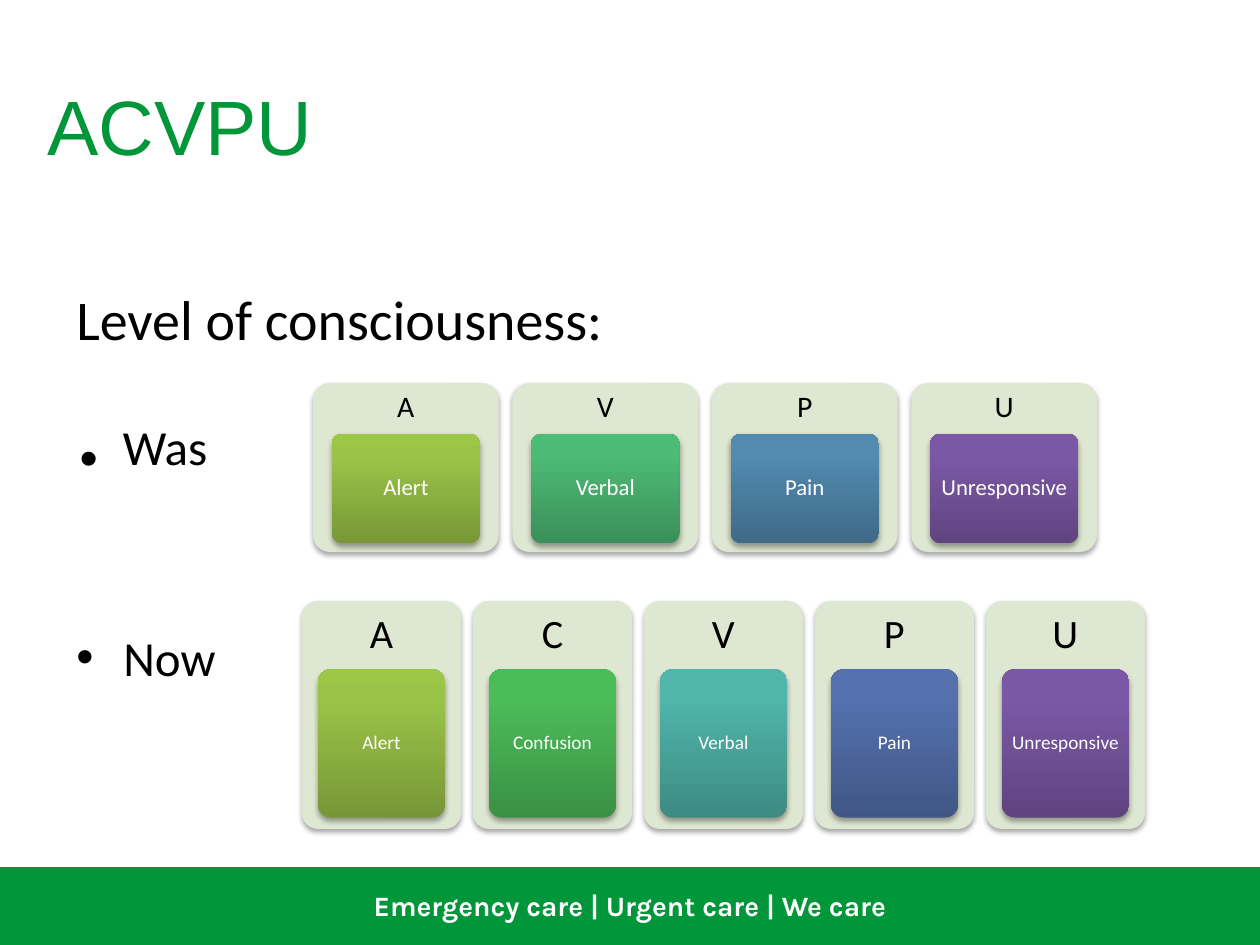
from copy import deepcopy

from lxml.etree import SubElement
from pptx import Presentation
from pptx.dml.color import RGBColor
from pptx.enum.shapes import MSO_SHAPE
from pptx.enum.text import MSO_ANCHOR, PP_ALIGN
from pptx.oxml.ns import qn
from pptx.util import Pt

PX = 914400 // 126
WIDTH, HEIGHT = 1260, 945

GREEN = RGBColor(0x00, 0x96, 0x39)
WHITE = RGBColor(0xFF, 0xFF, 0xFF)
BLACK = RGBColor(0x00, 0x00, 0x00)
PANEL = RGBColor(0xDE, 0xE7, 0xD1)
# Tile gradients, bottom to top
LIME = ("779737", "9BC348", "9DC746")
MINT = ("3B8F5A", "4DBA75", "4BBD75")
LEAF = ("3A9144", "4CBC58", "4ABF57")
TEAL = ("3D8B83", "50B5AA", "4EB8AC")
STEEL = ("3F6A88", "528AB0", "518BB3")
INDIGO = ("405786", "5471AE", "5271B0")
PURPLE = ("5F4480", "7B58A6", "7C57A8")
GRADIENT_POSITIONS = (0, 0.8, 1)

TITLE = "ACVPU"
FOOTER = "Emergency care | Urgent care | We care"
# Runs of (text, size, bold), space before, bulleted
BODY = [
    ([("Level of consciousness:", 32, False)], 0, False),
    ([(". ", 54, True), ("Was", 28, False)], 11, False),
    ([("Now", 28, False)], 82, True),
]
SCALES = [
    dict(box=(313, 383, 784, 169), letter_size=17, word_size=13, levels=[
        ("A", "Alert", LIME), ("V", "Verbal", MINT),
        ("P", "Pain", STEEL), ("U", "Unresponsive", PURPLE)]),
    dict(box=(302, 601, 843, 228), letter_size=23, word_size=11, levels=[
        ("A", "Alert", LIME), ("C", "Confusion", LEAF), ("V", "Verbal", TEAL),
        ("P", "Pain", INDIGO), ("U", "Unresponsive", PURPLE)]),
]
GAP_RATIO = 0.075  # gap between panels, as a share of panel width


def emu(*lengths):
    return [round(length * PX) for length in lengths]


def style(paragraph, size, color, font="Calibri", bold=False, align=None):
    paragraph.font.name = font
    paragraph.font.size = Pt(size)
    paragraph.font.color.rgb = color
    paragraph.font.bold = bold
    paragraph.alignment = align


def set_margins(frame, horizontal, vertical):
    frame.margin_left = frame.margin_right = horizontal * PX
    frame.margin_top = frame.margin_bottom = vertical * PX


def add_text_box(shapes, box):
    frame = shapes.add_textbox(*emu(*box)).text_frame
    frame.word_wrap = True
    return frame


def centre_label(frame, text, size, color):
    frame.word_wrap = True
    frame.vertical_anchor = MSO_ANCHOR.MIDDLE
    label = frame.paragraphs[0]
    label.text = text
    label.line_spacing = 0.9
    style(label, size, color, align=PP_ALIGN.CENTER)


def add_card(shapes, box):
    """Add a rounded, borderless rectangle with a soft shadow below it."""
    card = shapes.add_shape(MSO_SHAPE.ROUNDED_RECTANGLE, *emu(*box))
    card.adjustments[0] = 0.1
    card.line.fill.background()
    card.shadow.inherit = False
    effects = card._element.spPr.find(qn("a:effectLst"))
    shadow = SubElement(effects, qn("a:outerShdw"), blurRad="40000",
                        dist="23000", dir="5400000", rotWithShape="0")
    black = SubElement(shadow, qn("a:srgbClr"), val="000000")
    SubElement(black, qn("a:alpha"), val="35000")
    return card


def fill_gradient(shape, colors):
    shape.fill.gradient()
    shape.fill.gradient_angle = 90
    stop_list = shape._element.spPr.find(".//" + qn("a:gsLst"))
    stop_list.append(deepcopy(stop_list[-1]))
    for stop, position, color in zip(shape.fill.gradient_stops,
                                     GRADIENT_POSITIONS, colors):
        stop.position = position
        stop.color.rgb = RGBColor.from_string(color)


def add_scale(slide, box, letter_size, word_size, levels):
    left, top, span, height = box
    shapes = slide.shapes.add_group_shape().shapes
    width = span / (len(levels) + (len(levels) - 1) * GAP_RATIO)
    for index, (letter, word, colors) in enumerate(levels):
        x = left + index * width * (1 + GAP_RATIO)
        panel = add_card(shapes, (x, top, width, height))
        panel.fill.solid()
        panel.fill.fore_color.rgb = PANEL

        heading = add_text_box(shapes, (x, top, width, height * 0.3))
        set_margins(heading, 10, 10)
        centre_label(heading, letter, letter_size, BLACK)

        tile = add_card(shapes, (x + width * 0.1, top + height * 0.3,
                                 width * 0.8, height * 0.65))
        fill_gradient(tile, colors)
        set_margins(tile.text_frame, 5, 4)
        centre_label(tile.text_frame, word, word_size, WHITE)


def add_bullet(paragraph, indent):
    properties = paragraph._p.get_or_add_pPr()
    properties.set("marL", str(indent * PX))
    properties.set("indent", str(-indent * PX))
    SubElement(properties, qn("a:buFont"), typeface="Arial")
    SubElement(properties, qn("a:buChar"), char="•")


def add_body(slide):
    frame = add_text_box(slide.shapes, (64, 278, 1134, 580))
    for index, (runs, space_before, bulleted) in enumerate(BODY):
        paragraph = frame.add_paragraph() if index else frame.paragraphs[0]
        if bulleted:
            add_bullet(paragraph, 47)
        if space_before:
            paragraph.space_before = Pt(space_before)
        for text, size, bold in runs:
            run = paragraph.add_run()
            run.text = text
            run.font.size = Pt(size)
            run.font.bold = bold
        style(paragraph, runs[-1][1], BLACK)


def add_footer(slide):
    band = slide.shapes.add_shape(MSO_SHAPE.RECTANGLE,
                                  *emu(0, 869, WIDTH, HEIGHT - 869))
    band.shadow.inherit = False
    band.fill.solid()
    band.fill.fore_color.rgb = GREEN
    band.line.color.rgb = GREEN
    band.line.width = Pt(2)
    motto = add_text_box(slide.shapes, (0, 882, WIDTH, 47)).paragraphs[0]
    motto.text = FOOTER
    style(motto, 16, WHITE, "Karla", True, PP_ALIGN.CENTER)


def main():
    presentation = Presentation()
    presentation.slide_width, presentation.slide_height = emu(WIDTH, HEIGHT)
    slide = presentation.slides.add_slide(presentation.slide_layouts[6])
    add_footer(slide)
    title = add_text_box(slide.shapes, (35, 66, 1095, 157))
    title.margin_top = 13 * PX
    title.paragraphs[0].text = TITLE
    style(title.paragraphs[0], 44, GREEN, "Arial")
    add_body(slide)
    for scale in SCALES:
        add_scale(slide, **scale)
    presentation.save("out.pptx")


if __name__ == "__main__":
    main()
